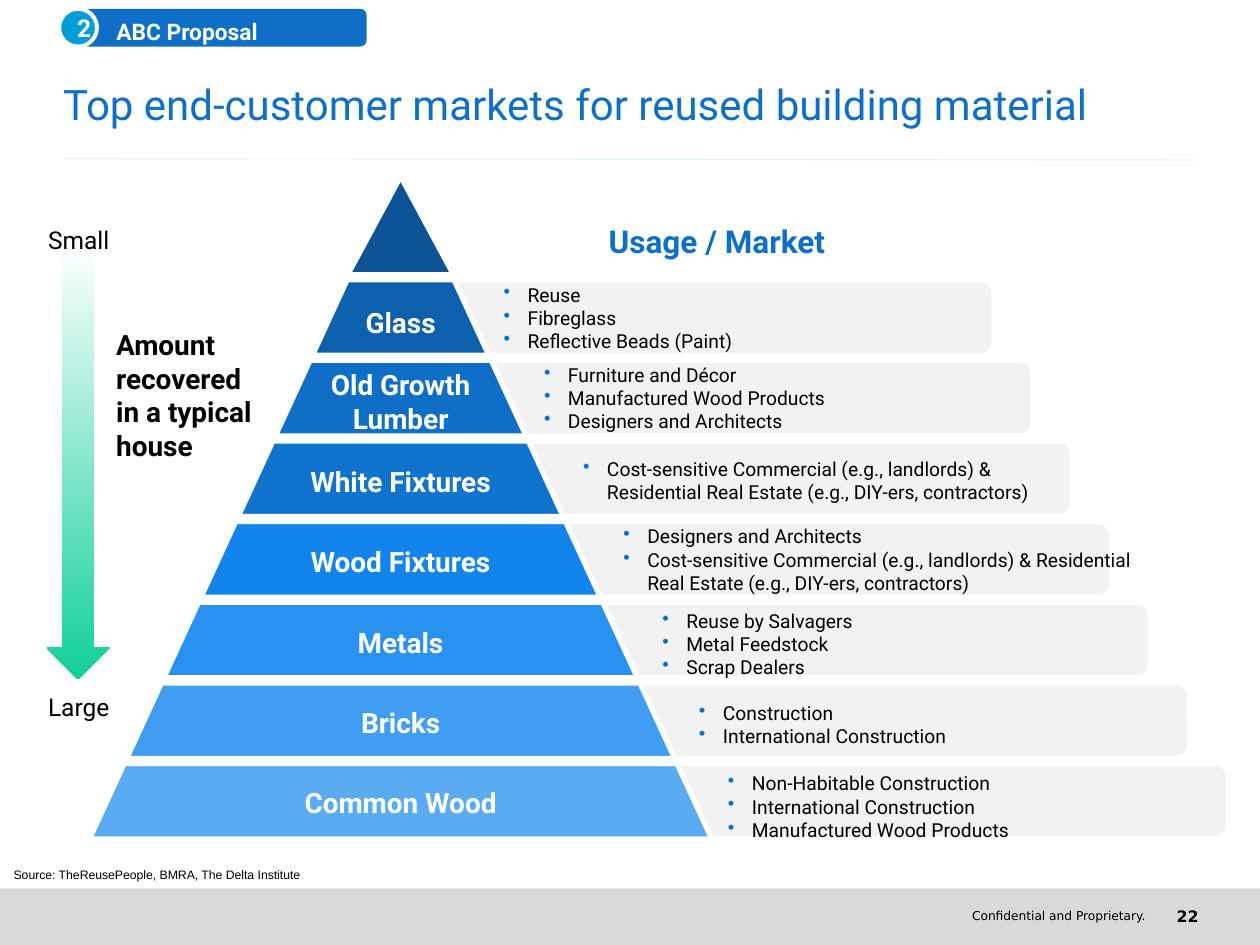
import pptx
import pptx.util
import pptx.dml.color
import pptx.enum.shapes
import pptx.enum.text
import pptx.oxml.ns
import lxml.etree

Inches = pptx.util.Inches
Pt = pptx.util.Pt
RGB = pptx.dml.color.RGBColor.from_string
SHAPE = pptx.enum.shapes.MSO_SHAPE
ALIGN = pptx.enum.text.PP_ALIGN
ANCHOR = pptx.enum.text.MSO_ANCHOR
qn = pptx.oxml.ns.qn

THEME = {
    "blue": "0F6FC6", "cyan": "009DD9", "mint": "10CF9B", "white": "FFFFFF",
    "black": "000000", "panel": "F2F2F2", "footer": "D9D9D9", "rule": "DBF5F9",
    "peak": "0B5394",
    "tiers": ["0D60AB", "0F6FC7", "1074CE", "1284EC", "2991EF", "419DF1", "5BABF3"],
    "title": {"name": "Roboto", "size": Pt(24), "bold": False},
    "heading": {"name": "Roboto", "size": Pt(18), "bold": True},
    "tier": {"name": "Roboto", "size": Pt(16), "bold": True},
    "scale": {"name": "Roboto", "size": Pt(14), "bold": False},
    "badge": {"name": "Roboto", "size": Pt(14), "bold": True},
    "section": {"name": "Roboto", "size": Pt(13), "bold": True},
    "list": {"name": "Roboto", "size": Pt(11), "bold": False},
    "page": {"name": "DejaVu Sans", "size": Pt(9), "bold": True},
    "notice": {"name": "DejaVu Sans", "size": Pt(7), "bold": False},
    "source": {"name": "Arial", "size": Pt(7), "bold": False},
}


def add_block(kind, box, fill=None, line=None, weight=3, adjust=None):
    block = slide.shapes.add_shape(kind, *map(Inches, box))
    block.shadow.inherit = False
    if fill:
        block.fill.solid()
        block.fill.fore_color.rgb = RGB(fill)
    else:
        block.fill.background()
    if line:
        block.line.color.rgb = RGB(line)
        block.line.width = Pt(weight)
    else:
        block.line.fill.background()
    if adjust is not None:
        block.adjustments[0] = adjust
    return block


def write(holder, lines, style, color, align=ALIGN.LEFT, anchor=ANCHOR.MIDDLE,
          insets=(0.1, 0.05, 0.1, 0.05), bullet=False, wrap=True):
    frame = holder.text_frame
    sides = ("margin_left", "margin_top", "margin_right", "margin_bottom")
    layout = dict(zip(sides, map(Inches, insets)), word_wrap=wrap, vertical_anchor=anchor)
    for key, value in layout.items():
        setattr(frame, key, value)
    for index, line in enumerate(lines):
        paragraph = frame.add_paragraph() if index else frame.paragraphs[0]
        paragraph.alignment = align
        if bullet:
            properties = paragraph._p.get_or_add_pPr()
            properties.set("marL", str(Inches(0.19)))
            properties.set("indent", str(-Inches(0.19)))
            tint = lxml.etree.SubElement(properties, qn("a:buClr"))
            lxml.etree.SubElement(tint, qn("a:srgbClr"), val=THEME["blue"])
            lxml.etree.SubElement(properties, qn("a:buChar"), char="•")
        run = paragraph.add_run()
        run.text = line
        for key, value in THEME[style].items():
            setattr(run.font, key, value)
        run.font.color.rgb = RGB(color)


RETAIL = ("Cost-sensitive Commercial (e.g., landlords) & Residential "
          "Real Estate (e.g., DIY-ers, contractors)")
MARKETS = [
    ("Glass", (3.87, 2.22, 2.57), ["Reuse", "Fibreglass", "Reflective Beads (Paint)"]),
    ("Old Growth Lumber", (4.19, 2.86, 3.08),
     ["Furniture and Décor", "Manufactured Wood Products", "Designers and Architects"]),
    ("White Fixtures", (4.5, 3.51, 4.23), [RETAIL]),
    ("Wood Fixtures", (4.82, 4.14, 4.37), ["Designers and Architects", RETAIL]),
    ("Metals", (5.13, 4.81, 2.57), ["Reuse by Salvagers", "Metal Feedstock", "Scrap Dealers"]),
    ("Bricks", (5.42, 5.45, 2.57), ["Construction", "International Construction"]),
    ("Common Wood", (5.65, 6.1, 2.97),
     ["Non-Habitable Construction", "International Construction", "Manufactured Wood Products"]),
]
TIER_TOP, TIER_PITCH, TIER_HEIGHT = 2.22, 0.64, 0.6
TIER_CENTER, TIER_WIDTH, TIER_GROWTH = 3.18, 1.4, 0.59
SLOPE = 0.46
tier_tops = [TIER_TOP + (TIER_PITCH * row) for row in range(len(MARKETS))]

presentation = pptx.Presentation()
presentation.slide_width = Inches(10)
presentation.slide_height = Inches(7.5)
slide = presentation.slides.add_slide(presentation.slide_layouts[5])

add_block(SHAPE.RECTANGLE, (0, 7.05, 10, 0.45), THEME["footer"])
notice = slide.shapes.add_textbox(*map(Inches, (4.05, 7.16, 5.14, 0.22)))
write(notice, ["Confidential and Proprietary."], "notice", THEME["black"],
      ALIGN.RIGHT, ANCHOR.TOP, (0, 0.05, 0.1, 0.05))
page_number = slide.shapes.add_textbox(*map(Inches, (8.99, 7.15, 0.62, 0.4)))
write(page_number, ["22"], "page", THEME["black"], ALIGN.RIGHT, ANCHOR.TOP)

title_rule = slide.shapes.add_connector(
    pptx.enum.shapes.MSO_CONNECTOR.STRAIGHT, *map(Inches, (0.51, 1.26, 9.49, 1.27)))
title_rule.line.color.rgb = RGB(THEME["rule"])
title_rule.line.width = Pt(0.5)
lxml.etree.SubElement(title_rule._element.spPr, qn("a:effectLst"))

title = slide.shapes.title
for side, length in {"left": 0.5, "top": 0.48, "width": 8.99, "height": 0.69}.items():
    setattr(title, side, Inches(length))
write(title, ["Top end-customer markets for reused building material"], "title",
      THEME["blue"], insets=(0, 0, 0, 0))

source = slide.shapes.add_textbox(*map(Inches, (0.01, 6.83, 2.51, 0.22)))
write(source, ["Source: TheReusePeople, BMRA, The Delta Institute"], "source",
      THEME["black"], anchor=ANCHOR.TOP, wrap=False)

for row, top in enumerate(tier_tops):
    add_block(SHAPE.ROUNDED_RECTANGLE, (3.19 + 0.31 * row, top, 4.7, TIER_HEIGHT),
              THEME["panel"], THEME["white"])

for row, (material, _, _) in enumerate(MARKETS):
    width = TIER_WIDTH + TIER_GROWTH * row
    tier = add_block(SHAPE.TRAPEZOID,
                     (TIER_CENTER - width / 2, tier_tops[row], width, TIER_HEIGHT),
                     THEME["tiers"][row], THEME["white"], adjust=SLOPE)
    write(tier, [material], "tier", THEME["white"], ALIGN.CENTER)
add_block(SHAPE.TRAPEZOID, (2.76, 1.4, 0.84, 0.78), THEME["peak"], THEME["white"], adjust=1.17)

amount_arrow = add_block(SHAPE.DOWN_ARROW, (0.37, 1.92, 0.5, 3.47))
amount_arrow.fill.gradient()
amount_arrow.fill.gradient_angle = 270
for stop, position, color in zip(amount_arrow.fill.gradient_stops, (0, 1), ("white", "mint")):
    stop.position = position
    stop.color.rgb = RGB(THEME[color])

amount = add_block(SHAPE.TRAPEZOID, (0.64, 2.8, 1.7, 0.6), adjust=SLOPE)
write(amount, ["Amount recovered in a typical house"], "tier", THEME["black"])
usage = add_block(SHAPE.ROUNDED_RECTANGLE, (3.93, 1.71, 3.52, 0.4))
write(usage, ["Usage / Market"], "heading", THEME["blue"], ALIGN.CENTER)

for _, place, uses in MARKETS:
    market = add_block(SHAPE.ROUNDED_RECTANGLE, (*place, TIER_HEIGHT))
    write(market, uses, "list", THEME["black"], bullet=True)

section = add_block(SHAPE.ROUNDED_RECTANGLE, (0.61, 0.07, 2.3, 0.3), THEME["blue"])
write(section, ["ABC Proposal"], "section", THEME["white"],
      anchor=ANCHOR.BOTTOM, insets=(0.3, 0, 0.1, 0))
badge = add_block(SHAPE.OVAL, (0.47, 0.07, 0.3, 0.3), THEME["cyan"], THEME["white"], 2.25)
write(badge, ["2"], "badge", THEME["white"], ALIGN.CENTER)

for label, top in (("Small", 1.6), ("Large", 5.31)):
    scale_end = slide.shapes.add_textbox(*map(Inches, (0.2, top, 0.85, 0.6)))
    write(scale_end, [label], "scale", THEME["black"], ALIGN.CENTER)

presentation.save("out.pptx")
